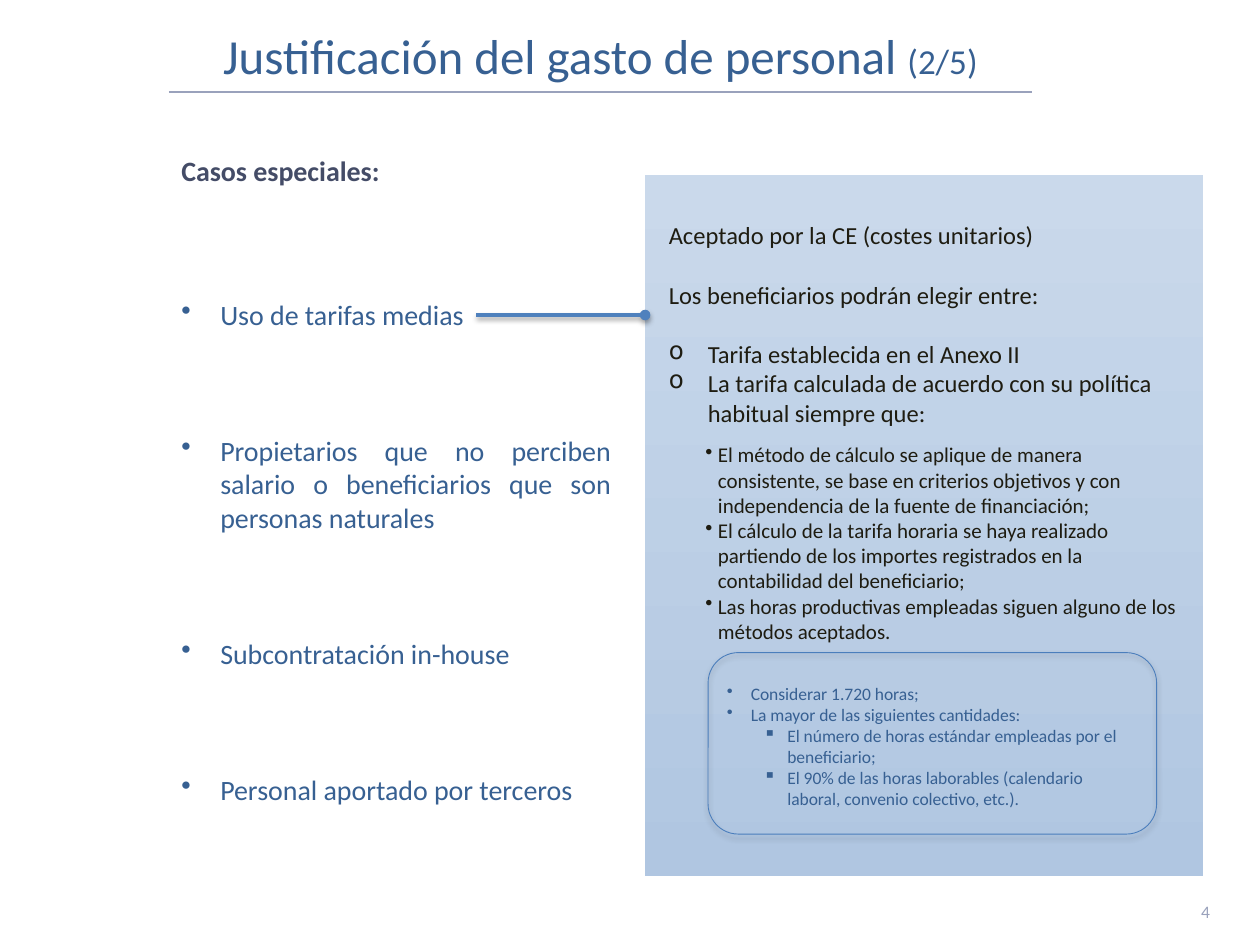
import pptx
import pptx.util
import pptx.dml.color
import pptx.enum.text
import pptx.enum.shapes
import pptx.oxml
import pptx.oxml.ns

Pt = pptx.util.Pt
Rgb = pptx.dml.color.RGBColor.from_string
Align = pptx.enum.text.PP_ALIGN
Shape = pptx.enum.shapes.MSO_SHAPE
Line = pptx.enum.shapes.MSO_CONNECTOR.STRAIGHT

theme = {
    "font": "Calibri",
    "rule": "9AA2BC", "link": "4F81BD", "edge": "4B7EBC",
    "top": "CAD9EB", "low": "B0C6E1",
    "title": (28, "376092", False),
    "count": (20, "376092", False),
    "head": (16, "444C67", True),
    "case": (16, "376092", False),
    "main": (14, "1E1C11", False),
    "sub": (12, "1E1C11", False),
    "note": (10, "376092", False),
    "page": (10, "9AA2BC", False),
}

deck = pptx.Presentation()
deck.slide_width = pptx.util.Inches(10)
deck.slide_height = pptx.util.Inches(7.5)
col = deck.slide_width / 100
row = deck.slide_height / 75
slide = deck.slides.add_slide(deck.slide_layouts[5])
shapes = slide.shapes


def grid(x, y, *size):
    return [round(n * unit) for n, unit in zip((x, y, *size), (col, row) * 2)]


def write(frame, rows, inset=0.5):
    frame.word_wrap = True
    frame.margin_top = round(inset * row)
    for i, (runs, form, mark) in enumerate(rows):
        para = frame.paragraphs[0] if i == 0 else frame.add_paragraph()
        if mark:
            sign, left, hang = mark
            props = para._p.get_or_add_pPr()
            props.set("marL", str(round(left * col)))
            props.set("indent", str(round(-hang * col)))
            tag = pptx.oxml.ns.qn("a:buChar")
            props.append(props.makeelement(tag, {"char": sign}))
        for key, value in form.items():
            setattr(para, key, value)
        for text, style in runs:
            run = para.add_run()
            run.text = text
            size, tint, bold = theme[style]
            look = {"name": theme["font"], "size": Pt(size), "bold": bold}
            for key, value in look.items():
                setattr(run.font, key, value)
            run.font.color.rgb = Rgb(tint)


title = shapes.title
spot = dict(zip(("left", "top", "width", "height"), grid(13.4, 3, 68.5, 4.2)))
for key, value in spot.items():
    setattr(title, key, value)
title.text_frame.auto_size = pptx.enum.text.MSO_AUTO_SIZE.NONE
title.text_frame.vertical_anchor = pptx.enum.text.MSO_ANCHOR.BOTTOM
write(title.text_frame, [(
    [("Justificación del gasto de personal ", "title"), ("(2/5)", "count")],
    {"alignment": Align.CENTER, "line_spacing": 0.8}, None)])

head = shapes.add_textbox(*grid(13.4, 12.4, 36.1, 4))
write(head.text_frame, [([("Casos especiales:", "head")], {"line_spacing": 0.7}, None)])

cases = [
    ("Uso de tarifas medias", {}),
    ("Propietarios que no perciben salario o beneficiarios que son personas naturales",
     {"alignment": Align.JUSTIFY, "space_before": Pt(58.5)}),
    ("Subcontratación in-house", {"space_before": Pt(58.5)}),
    ("Personal aportado por terceros", {"space_before": Pt(58.5)}),
]
list_box = shapes.add_textbox(*grid(13.4, 17, 36.1, 47.5))
write(list_box.text_frame,
      [([(text, "case")], form, ("•", 3.1, 3.1)) for text, form in cases], 6.6)

panel = shapes.add_shape(Shape.RECTANGLE, *grid(51.2, 13.9, 44.3, 55.6))
panel.shadow.inherit = False
panel.line.fill.background()
panel.fill.gradient()
panel.fill.gradient_angle = 270
for stop, tint in zip(panel.fill.gradient_stops, ("top", "low")):
    stop.color.rgb = Rgb(theme[tint])

lines = []
for start, end, tint, width in [
    ((13.4, 7.3), (81.9, 7.3), "rule", 1.5),
    ((37.8, 25), (51.2, 25), "link", 2),
]:
    line = shapes.add_connector(Line, *grid(*start), *grid(*end))
    line.line.color.rgb = Rgb(theme[tint])
    line.line.width = Pt(width)
    lines.append(line)
rule, link = lines
stroke = link.line._get_or_add_ln()
stroke.append(stroke.makeelement(pptx.oxml.ns.qn("a:tailEnd"), {"type": "oval"}))

gap = {"space_before": Pt(17)}
dot = ("•", 3.9, 1)
ring = ("o", 3.1, 3.1)
main = [
    ("Aceptado por la CE (costes unitarios)", "main", {}, None),
    ("Los beneficiarios podrán elegir entre:", "main", gap, None),
    ("Tarifa establecida en el Anexo II", "main", gap, ring),
    ("La tarifa calculada de acuerdo con su política habitual siempre que:", "main", {}, ring),
    ("El método de cálculo se aplique de manera consistente, se base en criterios "
     "objetivos y con independencia de la fuente de financiación;",
     "sub", {"level": 1, "space_before": Pt(8.5)}, dot),
    ("El cálculo de la tarifa horaria se haya realizado partiendo de los importes "
     "registrados en la contabilidad del beneficiario;", "sub", {"level": 1}, dot),
    ("Las horas productivas empleadas siguen alguno de los métodos aceptados.",
     "sub", {"level": 1}, dot),
]
main_box = shapes.add_textbox(*grid(52.1, 17, 42.6, 40.9))
write(main_box.text_frame,
      [([(text, style)], form, mark) for text, style, form, mark in main])

notes = [
    ("Considerar 1.720 horas;", 0),
    ("La mayor de las siguientes cantidades:", 0),
    ("El número de horas estándar empleadas por el beneficiario;", 1),
    ("El 90% de las horas laborables (calendario laboral, convenio colectivo, etc.).", 1),
]
marks = [("•", 1.9, 1.9), ("▪", 4.8, 1.9)]
group = shapes.add_group_shape()
note_box = group.shapes.add_textbox(*grid(56.7, 53, 34.1, 11.8))
write(note_box.text_frame,
      [([(text, "note")], {"level": level}, marks[level]) for text, level in notes], 1.2)
frame = group.shapes.add_shape(Shape.ROUNDED_RECTANGLE, *grid(56.2, 51.8, 35.6, 14.4))
frame.fill.background()
frame.line.color.rgb = Rgb(theme["edge"])
frame.line.width = Pt(0.5)

for item, alpha, drop in [(rule, 0, 0), (link, 38, 1.6), (frame, 35, 1.8)]:
    shade = (
        f'<a:outerShdw blurRad="{Pt(3.1)}" dist="{Pt(drop)}" dir="5400000" rotWithShape="0">'
        f'<a:srgbClr val="000000"><a:alpha val="{alpha * 1000}"/></a:srgbClr></a:outerShdw>'
    ) if alpha else ""
    item._element.spPr.append(pptx.oxml.parse_xml(
        f'<a:effectLst {pptx.oxml.ns.nsdecls("a")}>{shade}</a:effectLst>'))

page = shapes.add_textbox(*grid(91.8, 71, 5.2, 2.9))
write(page.text_frame, [([("4", "page")], {"alignment": Align.RIGHT}, None)])

deck.save("out.pptx")
